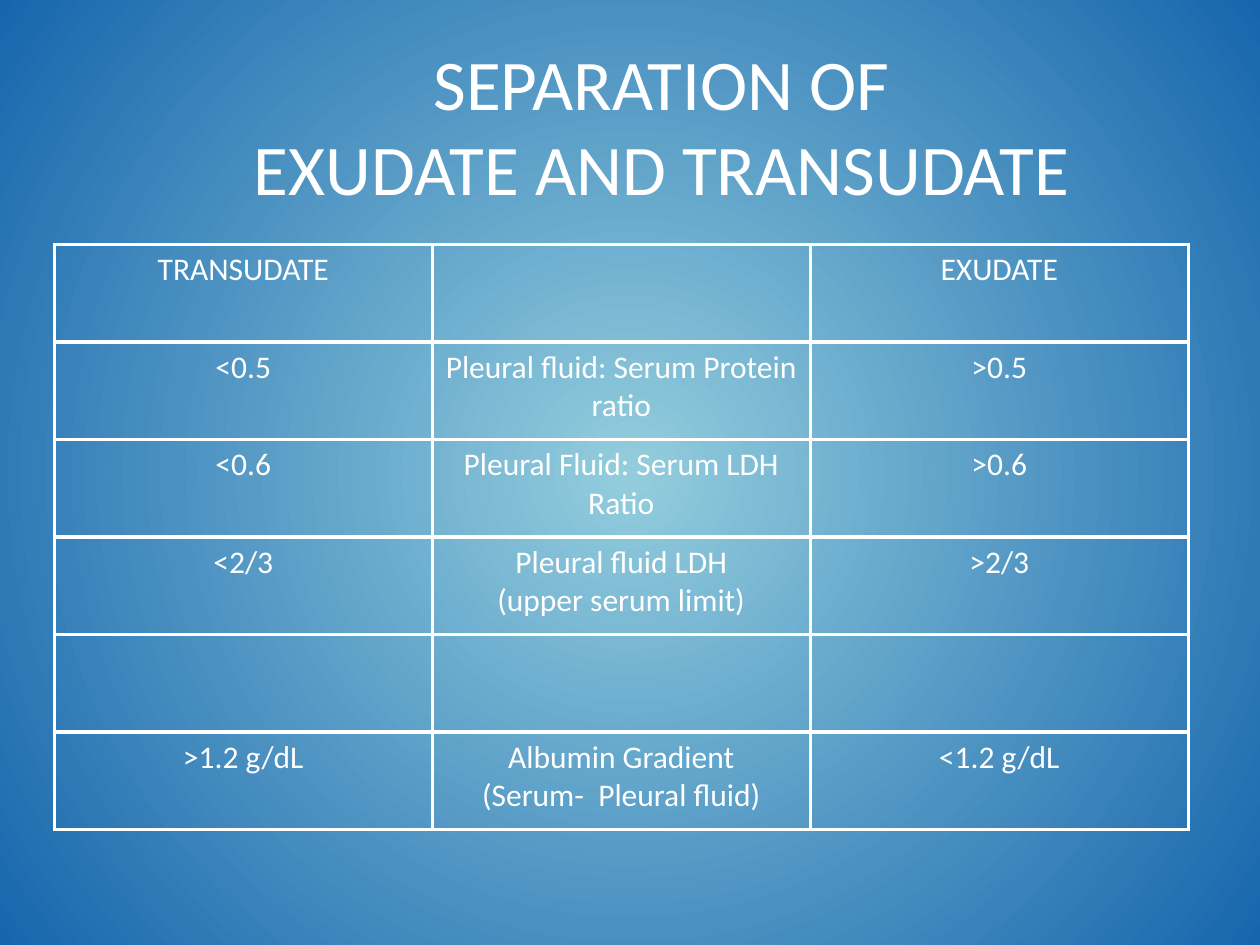
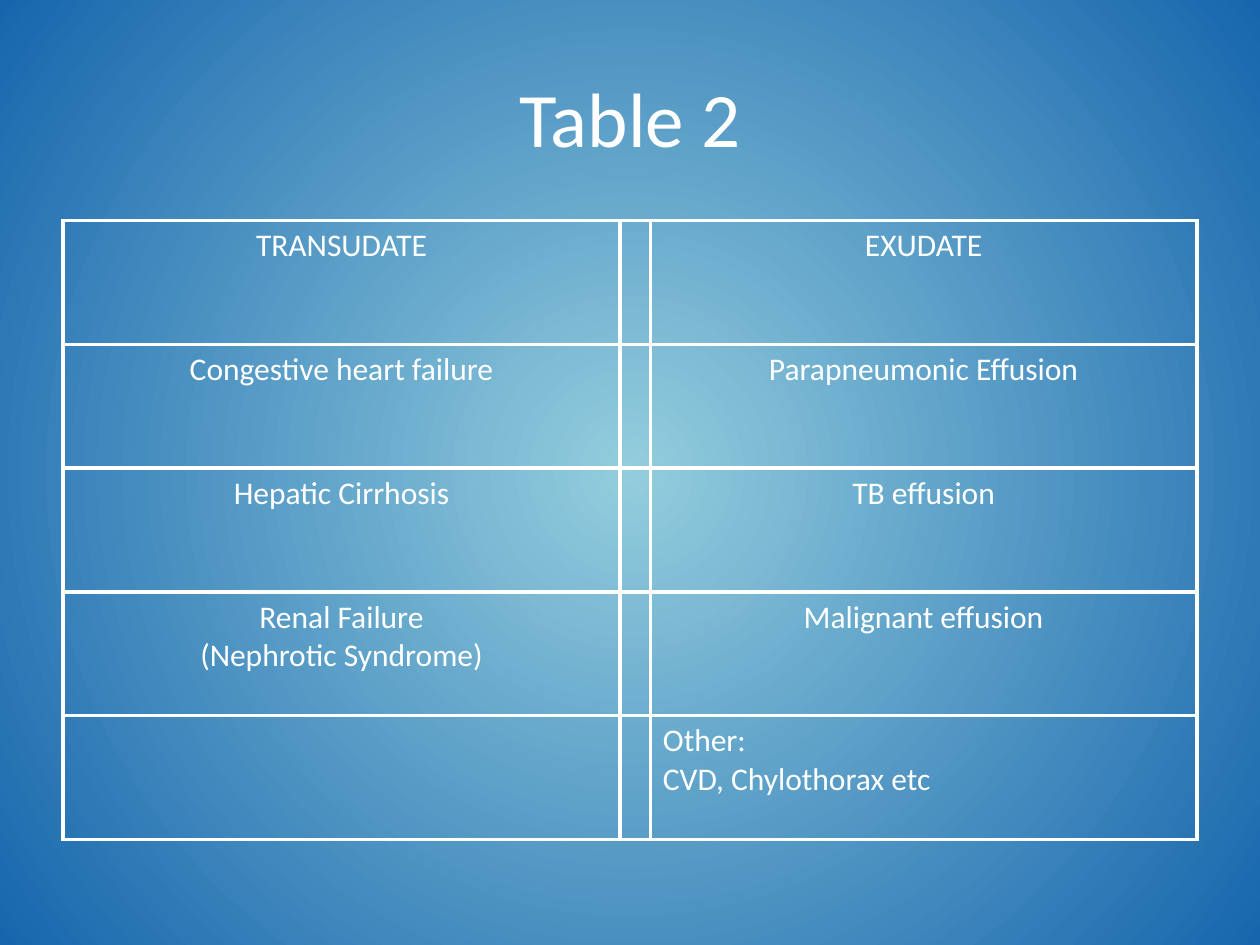
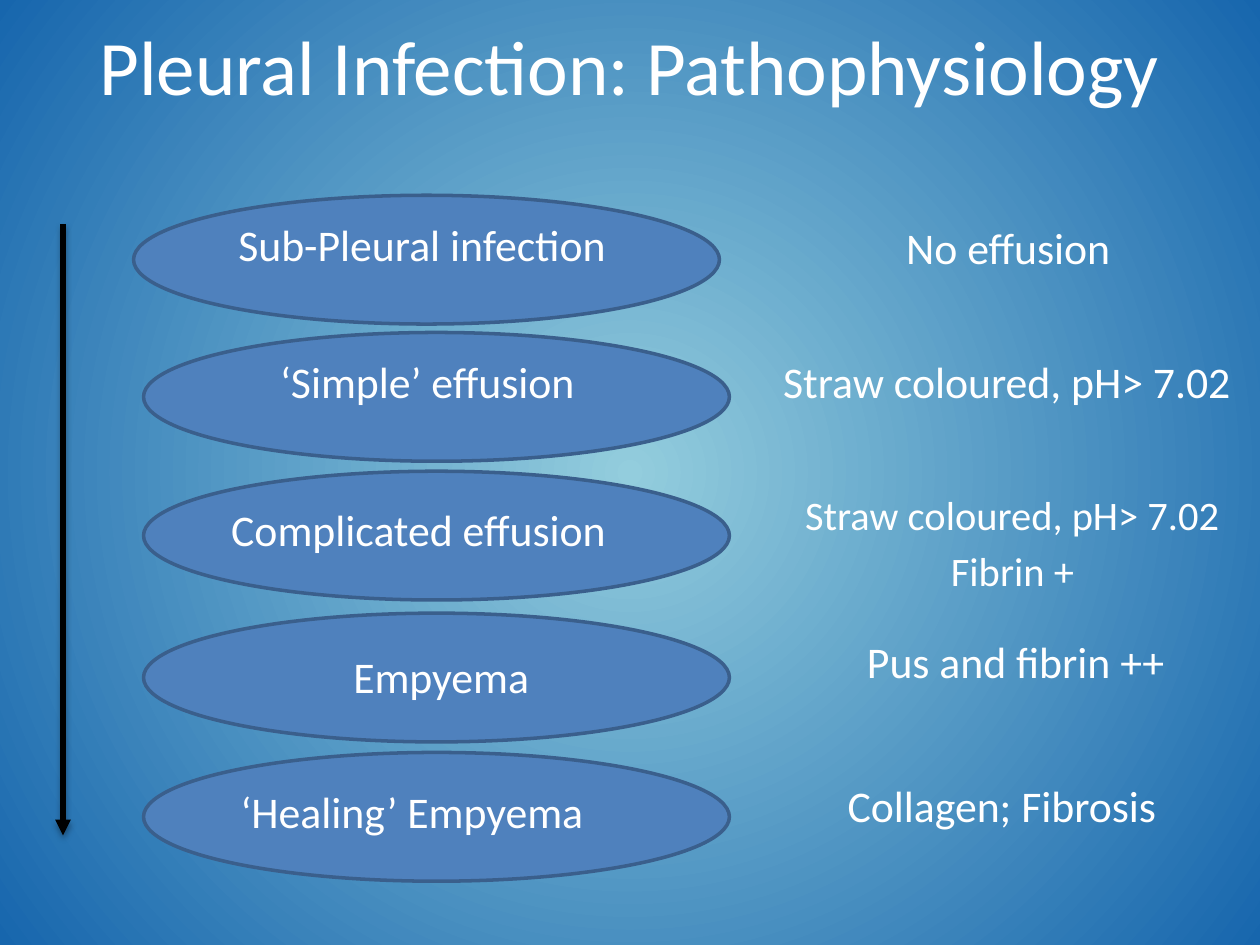
from lxml import etree
from pptx import Presentation
from pptx.dml.color import RGBColor
from pptx.enum import shapes, text
from pptx.oxml import ns
from pptx.util import Pt

WHITE = RGBColor(0xFF, 0xFF, 0xFF)
BLACK = RGBColor(0x00, 0x00, 0x00)
GLOW = RGBColor(0x93, 0xCD, 0xDD)
DEEP_BLUE = RGBColor(0x17, 0x66, 0xAD)
OVAL_FILL = RGBColor(0x4F, 0x81, 0xBD)
OVAL_EDGE = RGBColor(0x3A, 0x5F, 0x8C)
FONT = "Calibri"
CENTER = text.PP_ALIGN.CENTER


def add_text(slide, left, top, width, height, wording, size, anchor=text.MSO_ANCHOR.TOP):
    frame = slide.shapes.add_textbox(Pt(left), Pt(top), Pt(width), Pt(height)).text_frame
    frame.word_wrap = True
    frame.vertical_anchor = anchor
    frame.text = wording
    for paragraph in frame.paragraphs:
        paragraph.alignment = CENTER
        for run in paragraph.runs:
            run.font.name = FONT
            run.font.size = Pt(size)
            run.font.color.rgb = WHITE
    return frame


def add_grid(slide, left, top, widths, row_height, rows):
    grid = slide.shapes.add_table(len(rows), len(widths), Pt(left), Pt(top),
                                  Pt(sum(widths)), Pt(row_height * len(rows))).table
    grid.first_row = False
    grid.horz_banding = False
    for column, width in zip(grid.columns, widths):
        column.width = Pt(width)
    for row, wordings in zip(grid.rows, rows):
        row.height = Pt(row_height)
        for cell, wording in zip(row.cells, wordings):
            cell.text = wording
            cell.fill.background()
            for paragraph in cell.text_frame.paragraphs:
                paragraph.alignment = CENTER
                paragraph.font.name = FONT
                paragraph.font.size = Pt(18)
                for run in paragraph.runs:
                    run.font.name = FONT
                    run.font.size = Pt(18)
                    run.font.color.rgb = WHITE
            properties = cell._tc.get_or_add_tcPr()
            for place, side in enumerate(("lnL", "lnR", "lnT", "lnB")):
                border = etree.Element(ns.qn(f"a:{side}"), w=str(Pt(2.25)))
                solid = etree.SubElement(border, ns.qn("a:solidFill"))
                etree.SubElement(solid, ns.qn("a:srgbClr"), val=str(WHITE))
                properties.insert(place, border)
    return grid


deck = Presentation()
deck.slide_width = Pt(720)
deck.slide_height = Pt(540)
blank = deck.slide_layouts[6]

backdrop = deck.slide_master.background.fill
backdrop.gradient()
for stop, color in zip(backdrop.gradient_stops, (GLOW, DEEP_BLUE)):
    stop.color.rgb = color
gradient = deck.slide_master.element.find(".//" + ns.qn("a:gradFill"))
gradient.remove(gradient.find(ns.qn("a:lin")))
circle = etree.SubElement(gradient, ns.qn("a:path"))
circle.set("path", "circle")
etree.SubElement(circle, ns.qn("a:fillToRect"), l="50000", t="50000", r="50000", b="50000")

titles = [
    ("SEPARATION OF\nEXUDATE AND TRANSUDATE", 54, 26, 40.7),
    ("Table 2", 36, 21.6, 44),
    ("Pleural Infection: Pathophysiology", 36, -7.9, 44),
]
for title, left, top, size in titles:
    slide = deck.slides.add_slide(blank)
    add_text(slide, left, top, 648, 90, title, size, text.MSO_ANCHOR.MIDDLE)
separation, causes, pathophysiology = deck.slides

add_grid(separation, 31, 139.7, (216, 216, 216), 55.75, [
    ("TRANSUDATE", "", "EXUDATE"),
    ("<0.5", "Pleural fluid: Serum Protein ratio", ">0.5"),
    ("<0.6", "Pleural Fluid: Serum LDH Ratio", ">0.6"),
    ("<2/3", "Pleural fluid LDH\n(upper serum limit)", ">2/3"),
    ("", "", ""),
    (">1.2 g/dL", "Albumin Gradient\n(Serum-  Pleural fluid)", "<1.2 g/dL"),
])

cause_grid = add_grid(causes, 36, 126, (318.4, 17.2, 312.4), 70.75, [
    ("TRANSUDATE", "", "EXUDATE"),
    ("Congestive heart failure", "", "Parapneumonic Effusion"),
    ("Hepatic Cirrhosis", "", "TB effusion"),
    ("Renal Failure\n(Nephrotic Syndrome)", "", "Malignant effusion"),
    ("", "", "Other:\nCVD, Chylothorax etc"),
])
for paragraph in cause_grid.cell(4, 2).text_frame.paragraphs:
    paragraph.alignment = text.PP_ALIGN.LEFT

for left, top in ((76.3, 111.6), (82, 190), (82, 269.3), (82, 350.4), (82, 430)):
    oval = pathophysiology.shapes.add_shape(
        shapes.MSO_SHAPE.OVAL, Pt(left), Pt(top), Pt(334.8), Pt(73.6))
    oval.shadow.inherit = False
    oval.fill.solid()
    oval.fill.fore_color.rgb = OVAL_FILL
    oval.line.color.rgb = OVAL_EDGE
    oval.line.width = Pt(2)

stages = [
    ("Sub-Pleural infection", 82, 121),
    ("‘Simple’ effusion", 85, 199.4),
    ("Complicated effusion", 80, 283.7),
    ("Empyema", 93, 368),
    ("‘Healing’ Empyema", 76.3, 445),
]
for stage, left, top in stages:
    add_text(pathophysiology, left, top, 318.2, 75.6, stage, 25)

findings = [
    ("No effusion", 417, 122.4, 51, 25),
    ("Straw coloured, pH> 7.02", 416.2, 199.4, 51, 25),
    ("Straw coloured, pH> 7.02\nFibrin +", 419.5, 276.5, 67, 23.1),
    ("Pus and fibrin ++", 421.2, 359.3, 51, 25),
    ("Collagen; Fibrosis", 413.4, 441.4, 51, 25),
]
for finding, left, top, height, size in findings:
    frame = add_text(pathophysiology, left, top, 318.2, height, finding, size)
    for paragraph in frame.paragraphs[1:]:
        paragraph.space_before = Pt(4.6)

progression = pathophysiology.shapes.add_connector(
    shapes.MSO_CONNECTOR.STRAIGHT, Pt(36), Pt(128), Pt(36), Pt(477.4))
progression.line.color.rgb = BLACK
progression.line.width = Pt(3)
etree.SubElement(progression.line._get_or_add_ln(), ns.qn("a:tailEnd"), type="triangle")
effects = etree.SubElement(progression._element.spPr, ns.qn("a:effectLst"))
shadow = etree.SubElement(effects, ns.qn("a:outerShdw"), blurRad=str(Pt(3.1)),
                          dist=str(Pt(1.8)), dir="5400000", rotWithShape="0")
shade = etree.SubElement(shadow, ns.qn("a:srgbClr"), val=str(BLACK))
etree.SubElement(shade, ns.qn("a:alpha"), val="35000")

deck.save("out.pptx")
